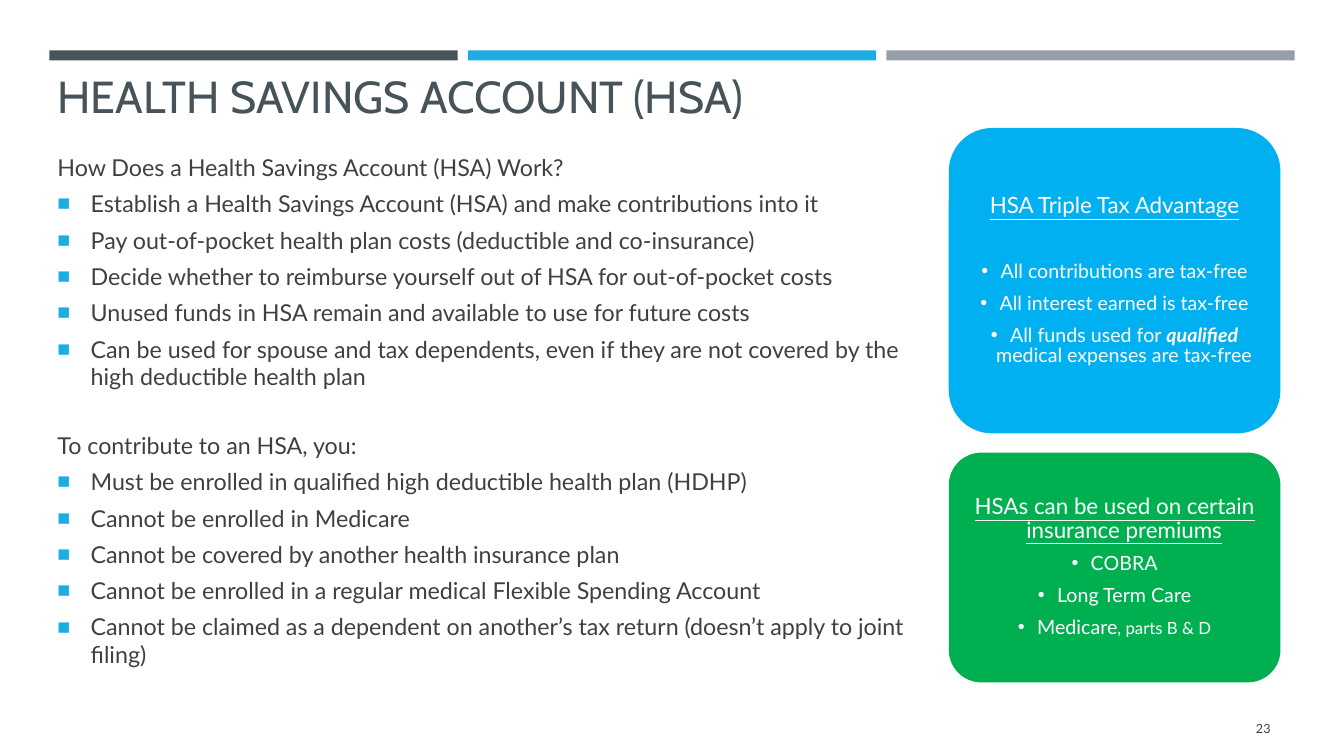
import pptx
import pptx.dml.color
import pptx.enum.shapes
import pptx.enum.text
import pptx.util
from lxml import etree
from pptx.oxml.ns import qn

Inches = pptx.util.Inches
Pt = pptx.util.Pt
ALIGN = pptx.enum.text.PP_ALIGN
ANCHOR = pptx.enum.text.MSO_ANCHOR
SHAPE = pptx.enum.shapes.MSO_SHAPE

COLORS = {
    "slate": "465359", "blue": "1CADE4", "gray": "969FA7", "text": "404040",
    "sky": "00B0F0", "green": "00B050", "white": "FFFFFF",
}
SECTIONS = [
    ("How Does a Health Savings Account (HSA) Work?", [
        "Establish a Health Savings Account (HSA) and make contributions into it",
        "Pay out-of-pocket health plan costs (deductible and co-insurance)",
        "Decide whether to reimburse yourself out of HSA for out-of-pocket costs",
        "Unused funds in HSA remain and available to use for future costs",
        "Can be used for spouse and tax dependents, even if they are not covered "
        "by the high deductible health plan",
    ]),
    ("To contribute to an HSA, you:", [
        "Must be enrolled in qualified high deductible health plan (HDHP)",
        "Cannot be enrolled in Medicare",
        "Cannot be covered by another health insurance plan",
        "Cannot be enrolled in a regular medical Flexible Spending Account",
        "Cannot be claimed as a dependent on another’s tax return "
        "(doesn’t apply to joint filing)",
    ]),
]
TAX_ITEMS = [
    [("All contributions are tax-free", {})],
    [("All interest earned is tax-free", {})],
    [("All funds used for ", {}), ("qualified", {"bold": True, "italic": True}),
     (" medical expenses are tax-free", {})],
]
PREMIUM_ITEMS = [
    [("COBRA", {})],
    [("Long Term Care", {})],
    [("Medicare", {}), (", parts B & D", {"size": Pt(12)})],
]


def rgb(name):
    """Return the named palette colour."""
    return pptx.dml.color.RGBColor.from_string(COLORS[name])


def apply(target, values):
    """Set attributes on an object from a dict."""
    for name, value in values.items():
        setattr(target, name, value)


def place(shape, box):
    """Move a shape to a box given in inches."""
    apply(shape, dict(zip(("left", "top", "width", "height"), map(Inches, box))))


def set_bullet(para, char, color, percent, indent):
    """Give a paragraph a hanging bullet, or none when char is empty."""
    props = para._p.get_or_add_pPr()
    props.set("marL", str(Inches(indent)))
    props.set("indent", str(-Inches(indent)))
    if not char:
        etree.SubElement(props, qn("a:buNone"))
        return
    tint = etree.SubElement(props, qn("a:buClr"))
    etree.SubElement(tint, qn("a:srgbClr"), val=COLORS[color])
    etree.SubElement(props, qn("a:buSzPct"), val=str(percent * 1000))
    etree.SubElement(props, qn("a:buFont"), typeface="Arial")
    etree.SubElement(props, qn("a:buChar"), char=char)


def add_span(para, text, color, values):
    """Add a run of text with the given font values."""
    span = para.add_run()
    span.text = text
    span.font.color.rgb = rgb(color)
    apply(span.font, {"name": "Lato", **values})


def next_para(frame):
    """Return the unused first paragraph or a new one."""
    first = frame.paragraphs[0]
    return frame.add_paragraph() if first.runs else first


def add_block(page, kind, box, color):
    """Add a flat filled shape."""
    shape = page.shapes.add_shape(kind, *map(Inches, box))
    shape.shadow.inherit = False
    shape.fill.solid()
    shape.fill.fore_color.rgb = rgb(color)
    shape.line.fill.background()
    return shape


def add_bars(page, box):
    """Split a strip into three coloured bars."""
    left, top, width, height = box
    gap = 0.1
    bar = (width - 2 * gap) / 3
    for index, color in enumerate(("slate", "blue", "gray")):
        add_block(page, SHAPE.RECTANGLE,
                  (left + index * (bar + gap), top, bar, height), color)


def fill_title(page, box):
    """Place and fill the title."""
    title = page.shapes.title
    place(title, box)
    apply(title.text_frame, {"vertical_anchor": ANCHOR.TOP, "word_wrap": True,
                             "auto_size": pptx.enum.text.MSO_AUTO_SIZE.NONE})
    para = title.text_frame.paragraphs[0]
    para.alignment = ALIGN.LEFT
    add_span(para, "HEALTH SAVINGS ACCOUNT (HSA)", "slate",
             {"name": "Cabin", "size": Pt(32)})


def fill_body(page, box):
    """Place the body and write its headed lists."""
    body = page.placeholders[1]
    place(body, box)
    frame = body.text_frame
    apply(frame, {"vertical_anchor": ANCHOR.TOP, "word_wrap": True,
                  "auto_size": pptx.enum.text.MSO_AUTO_SIZE.NONE})
    for number, (heading, items) in enumerate(SECTIONS):
        for index, text in enumerate([heading, *items]):
            para = next_para(frame)
            set_bullet(para, "■" if index else "", "blue", 92, 0.33 if index else 0)
            before = 23 if number and not index else 0
            apply(para, {"space_before": Pt(before), "space_after": Pt(6)})
            add_span(para, text, "text", {"size": Pt(16.6)})


def add_card(page, box, color, heading, items, gap):
    """Add a rounded card with an underlined heading and bullets."""
    card = add_block(page, SHAPE.ROUNDED_RECTANGLE, box, color)
    card.adjustments[0] = 0.142
    frame = card.text_frame
    apply(frame, {"vertical_anchor": ANCHOR.MIDDLE, "word_wrap": True})
    rows = [[(heading, {"size": Pt(16), "underline": True})], *items]
    for index, spans in enumerate(rows):
        para = next_para(frame)
        set_bullet(para, "•" if index else "", "white", 100, 0.19)
        before = (0, gap)[index] if index < 2 else 7
        apply(para, {"alignment": ALIGN.CENTER, "line_spacing": 0.86,
                     "space_before": Pt(before), "space_after": Pt(1.4)})
        for text, values in spans:
            add_span(para, text, "white", {"size": Pt(14), **values})


def add_page_number(page, box):
    """Add the page number at the lower right."""
    frame = page.shapes.add_textbox(*map(Inches, box)).text_frame
    apply(frame, {"vertical_anchor": ANCHOR.MIDDLE, "word_wrap": True})
    para = frame.paragraphs[0]
    para.alignment = ALIGN.RIGHT
    add_span(para, "23", "text", {"size": Pt(9)})


def main():
    """Build and save the slide."""
    deck = pptx.Presentation()
    apply(deck, {"slide_width": Inches(13.33), "slide_height": Inches(7.5)})
    page = deck.slides.add_slide(deck.slide_layouts[1])
    add_bars(page, (0.49, 0.5, 12.35, 0.1))
    fill_title(page, (0.47, 0.63, 12.39, 0.64))
    fill_body(page, (0.47, 1.47, 8.83, 5.4))
    add_card(page, (9.41, 1.27, 3.29, 3.03), "sky",
             "HSA Triple Tax Advantage", TAX_ITEMS, 30)
    add_card(page, (9.41, 4.49, 3.29, 2.28), "green",
             "HSAs can be used on certain insurance premiums", PREMIUM_ITEMS, 7)
    add_page_number(page, (11.55, 7.03, 1.15, 0.4))
    deck.save("out.pptx")


if __name__ == "__main__":
    main()
